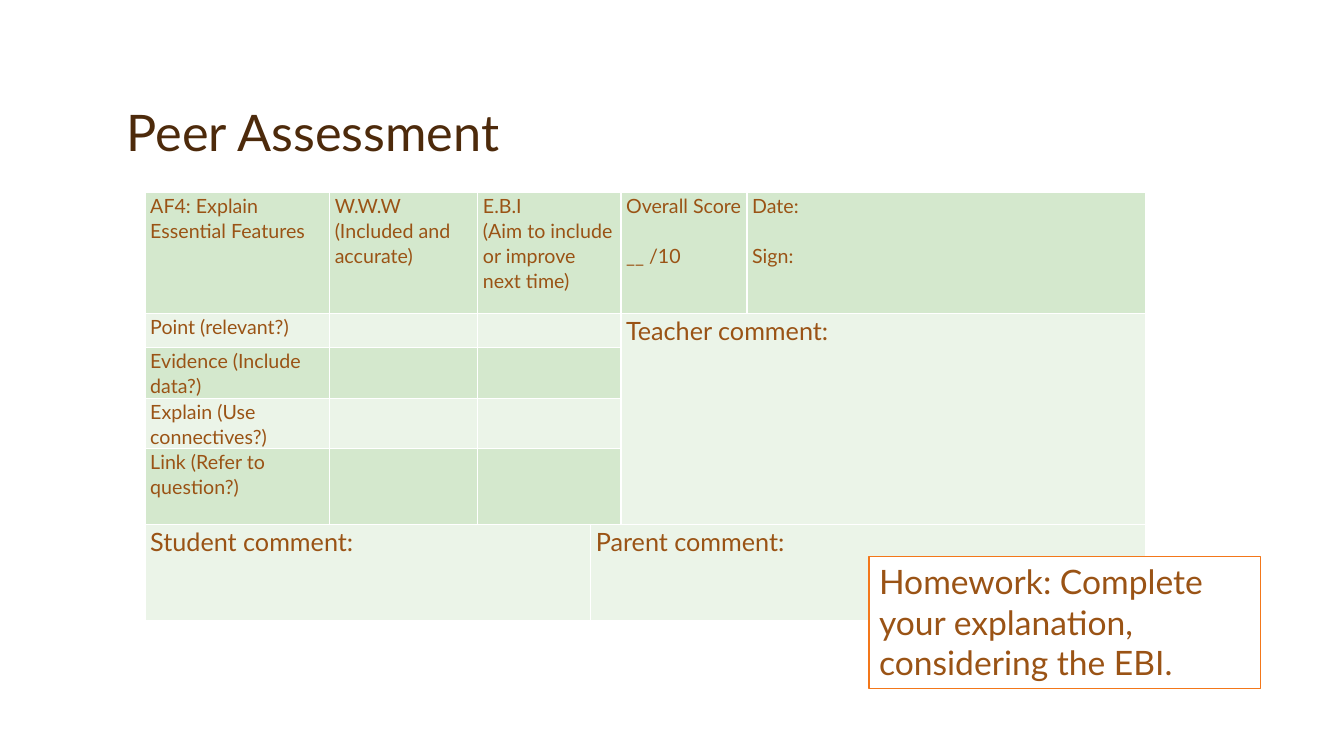
from dataclasses import dataclass

from lxml.etree import SubElement
from pptx import Presentation
from pptx.dml.color import RGBColor
from pptx.enum.shapes import MSO_SHAPE as SHAPE
from pptx.enum.text import MSO_ANCHOR as ANCHOR, MSO_AUTO_SIZE as AUTO_SIZE, PP_ALIGN as ALIGN
from pptx.oxml.ns import qn
from pptx.util import Inches, Pt


@dataclass(frozen=True)
class Theme:
    font: str = "Lato"
    title: str = "4D2A0B"
    text: str = "9A5315"
    accent: str = "F3771A"
    white: str = "FFFFFF"
    green: str = "D4E8CD"
    pale: str = "EBF4E8"
    title_size: int = 36
    homework_size: int = 24
    comment_size: int = 18
    body_size: int = 14


THEME = Theme()
TABLE_SPACING = 1.07
BLANK_LINE = 18  # points, one line of body text

COLUMNS = [1.83, 1.47, 1.12, 0.3, 1.25, 3.95]
ROWS = [1.2, 0.34, 0.5, 0.5, 0.75, 0.96]
ROW_FILLS = [THEME.green, THEME.pale, THEME.green, THEME.pale, THEME.green, THEME.pale]

# (first row, first column, last row, last column)
MERGES = [(row, 2, row, 3) for row in range(5)] + [(1, 4, 4, 5), (5, 0, 5, 2), (5, 3, 5, 5)]

# (row, column): (lines, points before each line after the first)
HEADINGS = {
    (0, 0): (["AF4: Explain", "Essential Features"], 0),
    (0, 1): (["W.W.W", "(Included and accurate)"], 0),
    (0, 2): (["E.B.I", "(Aim to include or improve next time)"], 0),
    (0, 4): (["Overall Score", "__ /10"], BLANK_LINE),
    (0, 5): (["Date:", "Sign:"], BLANK_LINE),
    (1, 0): (["Point (relevant?)"], 0),
    (2, 0): (["Evidence (Include data?)"], 0),
    (3, 0): (["Explain (Use connectives?)"], 0),
    (4, 0): (["Link (Refer to question?)"], 0),
}
COMMENTS = {
    (1, 4): "Teacher comment:",
    (5, 0): "Student comment:",
    (5, 3): "Parent comment:",
}


def set_attributes(target, values):
    for name, value in values.items():
        setattr(target, name, value)


def write_lines(tf, lines, size, color, spacing=1.0, gap=0):
    """Write one paragraph per line, with gap points before all but the first."""
    for i, line in enumerate(lines):
        p = tf.paragraphs[0] if i == 0 else tf.add_paragraph()
        set_attributes(p, {"alignment": ALIGN.LEFT, "line_spacing": spacing,
                           "space_before": Pt(gap if i else 0)})
        set_attributes(p.font, {"name": THEME.font, "size": Pt(size)})
        if line:
            r = p.add_run()
            r.text = line
            set_attributes(r.font, {"name": THEME.font, "size": Pt(size), "bold": False})
            r.font.color.rgb = RGBColor.from_string(color)


def add_title(slide, left, top, width, height):
    sp = slide.shapes.add_textbox(Inches(left), Inches(top), Inches(width), Inches(height))
    tf = sp.text_frame
    set_attributes(tf, {"word_wrap": True, "vertical_anchor": ANCHOR.BOTTOM})
    write_lines(tf, ["Peer Assessment"], THEME.title_size, THEME.title, 0.9)


def add_borders(cell):
    tc_pr = cell._tc.get_or_add_tcPr()
    for i, side in enumerate(("lnL", "lnR", "lnT", "lnB")):
        ln = SubElement(tc_pr, qn(f"a:{side}"), w=str(Pt(1)))
        fill = SubElement(ln, qn("a:solidFill"))
        SubElement(fill, qn("a:srgbClr"), val=THEME.white)
        tc_pr.insert(i, ln)


def style_cell(cell, color):
    set_attributes(cell, {"margin_left": Inches(0.05), "margin_right": Inches(0.05),
                          "margin_top": 0, "margin_bottom": 0,
                          "vertical_anchor": ANCHOR.TOP})
    cell.fill.solid()
    cell.fill.fore_color.rgb = RGBColor.from_string(color)
    add_borders(cell)


def add_assessment_table(slide, left, top):
    frame = slide.shapes.add_table(len(ROWS), len(COLUMNS), Inches(left), Inches(top),
                                   Inches(sum(COLUMNS)), Inches(sum(ROWS)))
    table = frame.table
    set_attributes(table, {"first_row": False, "horz_banding": False})
    for column, width in zip(table.columns, COLUMNS):
        column.width = Inches(width)
    for row, height in zip(table.rows, ROWS):
        row.height = Inches(height)

    for r, color in enumerate(ROW_FILLS):
        for c in range(len(COLUMNS)):
            cell = table.cell(r, c)
            style_cell(cell, color)
            if (r, c) in COMMENTS:
                lines, gap, size = [COMMENTS[r, c]], 0, THEME.comment_size
            else:
                lines, gap = HEADINGS.get((r, c), ([""], 0))
                size = THEME.body_size
            write_lines(cell.text_frame, lines, size, THEME.text, TABLE_SPACING, gap)

    for r1, c1, r2, c2 in MERGES:
        table.cell(r1, c1).merge(table.cell(r2, c2))


def add_homework(slide, left, top, width, height):
    sp = slide.shapes.add_shape(SHAPE.RECTANGLE, Inches(left), Inches(top),
                                Inches(width), Inches(height))
    sp.shadow.inherit = False
    sp.fill.solid()
    sp.fill.fore_color.rgb = RGBColor.from_string(THEME.white)
    sp.line.color.rgb = RGBColor.from_string(THEME.accent)
    sp.line.width = Pt(1)
    tf = sp.text_frame
    set_attributes(tf, {"word_wrap": True, "vertical_anchor": ANCHOR.TOP,
                        "auto_size": AUTO_SIZE.SHAPE_TO_FIT_TEXT})
    write_lines(tf, ["Homework: Complete your explanation, considering the EBI."],
                THEME.homework_size, THEME.text)


def main():
    prs = Presentation()
    prs.slide_width, prs.slide_height = Inches(13.33), Inches(7.5)
    slide = prs.slides.add_slide(prs.slide_layouts[6])
    add_title(slide, 1.16, 0.33, 11, 1.33)
    add_assessment_table(slide, 1.44, 1.91)
    add_homework(slide, 8.62, 5.52, 3.88, 1.31)
    prs.save("out.pptx")


if __name__ == "__main__":
    main()
